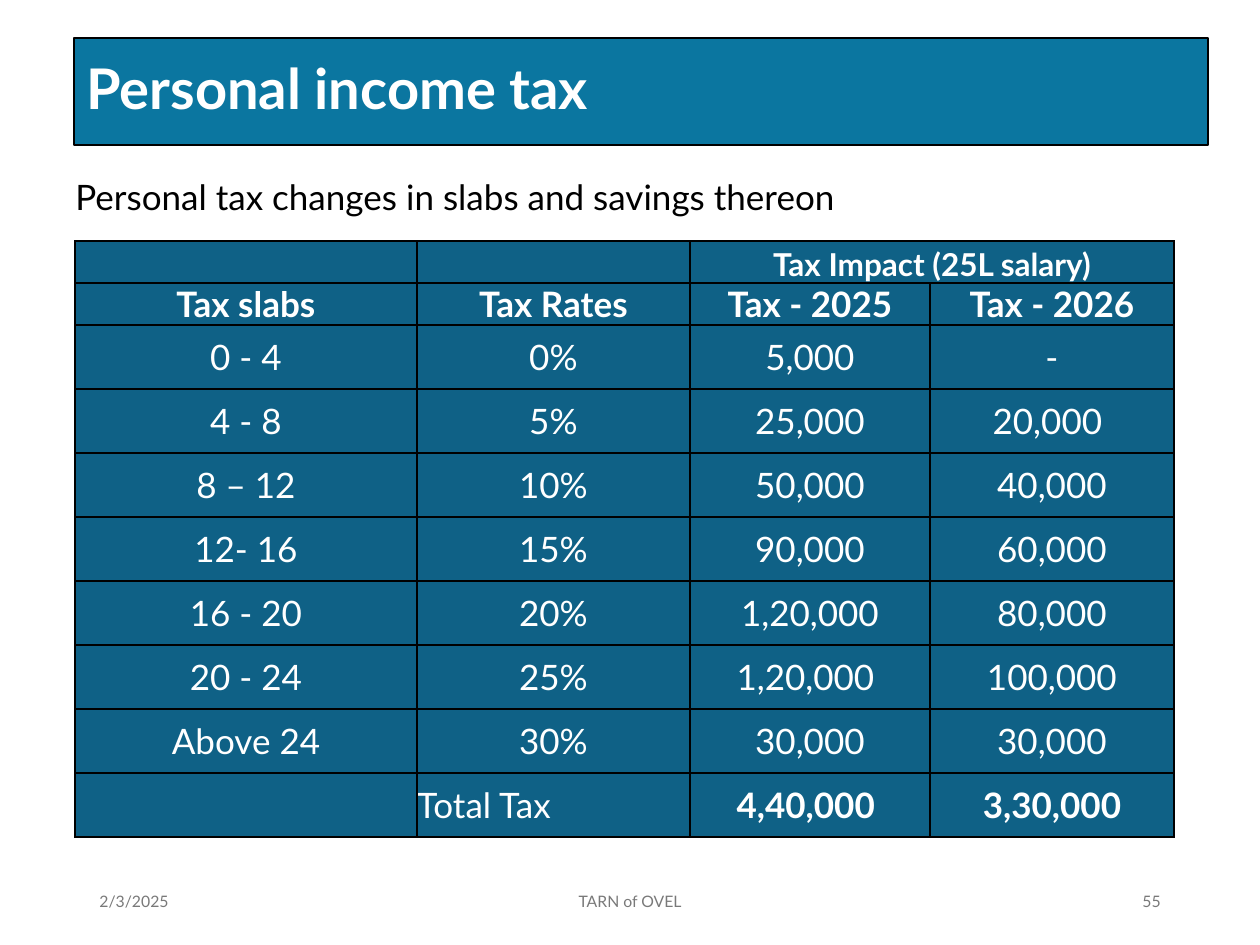
from lxml import etree
from pptx import Presentation
from pptx.dml.color import RGBColor
from pptx.enum.shapes import MSO_SHAPE
from pptx.enum.text import MSO_ANCHOR, PP_ALIGN
from pptx.oxml.ns import qn
from pptx.util import Pt

RECT = MSO_SHAPE.RECTANGLE
TOP, MIDDLE, BOTTOM = MSO_ANCHOR.TOP, MSO_ANCHOR.MIDDLE, MSO_ANCHOR.BOTTOM
LEFT, CENTER, RIGHT = PP_ALIGN.LEFT, PP_ALIGN.CENTER, PP_ALIGN.RIGHT

WHITE = RGBColor(0xFF, 0xFF, 0xFF)
BLACK = RGBColor(0x00, 0x00, 0x00)
GRAY = RGBColor(0x79, 0x79, 0x79)
BLUE = RGBColor(0x0B, 0x76, 0xA0)
NAVY = RGBColor(0x0F, 0x61, 0x86)

FONT = "Lato"
PX = 914400 / 126

COLS = [342, 273, 240, 244]
HEADS = 2
ROWS = [
    ["", "", "Tax Impact (25L salary)", ""],
    ["Tax slabs", "Tax Rates", "Tax - 2025", "Tax - 2026"],
    ["0 - 4", "0%", "5,000", "-"],
    ["4 - 8", "5%", "25,000", "20,000 "],
    ["8 – 12", "10%", "50,000", "40,000"],
    ["12- 16", "15%", "90,000", "60,000"],
    ["16 - 20", "20%", "1,20,000", "80,000"],
    ["20 - 24", "25%", "1,20,000 ", "100,000"],
    ["Above 24", "30%", "30,000", "30,000"],
    ["", "Total Tax", "4,40,000 ", "3,30,000"],
]


def px(num):
    return round(num * PX)


def add_run(para, text, size, color, bold=False):
    run = para.add_run()
    run.text = text
    font = run.font
    font.name, font.size, font.bold = FONT, Pt(size), bold
    font.color.rgb = color


def add_title(slide, text, box):
    bar = slide.shapes.add_shape(RECT, *map(px, box))
    bar.shadow.inherit = False
    bar.fill.solid()
    bar.fill.fore_color.rgb = BLUE
    bar.line.color.rgb = BLACK
    bar.line.width = Pt(0.75)
    bar.text_frame.vertical_anchor = MIDDLE
    para = bar.text_frame.paragraphs[0]
    para.alignment = LEFT
    para.line_spacing = 0.9
    add_run(para, text, 32, WHITE, True)


def add_text(slide, text, box, size, color, align=LEFT, anchor=MIDDLE):
    frame = slide.shapes.add_textbox(*map(px, box)).text_frame
    frame.word_wrap = True
    frame.vertical_anchor = anchor
    para = frame.paragraphs[0]
    para.alignment = align
    add_run(para, text, size, color)
    return para


def add_edges(cell):
    props = cell._tc.get_or_add_tcPr()
    for spot, side in enumerate(("lnL", "lnR", "lnT", "lnB")):
        line = etree.Element(qn(f"a:{side}"), w=str(Pt(1)))
        fill = etree.SubElement(line, qn("a:solidFill"))
        etree.SubElement(fill, qn("a:srgbClr"), val=str(BLACK))
        props.insert(spot, line)


def fill_cell(cell, text, row):
    cell.fill.solid()
    cell.fill.fore_color.rgb = NAVY
    cell.margin_left = cell.margin_right = 0
    cell.margin_top = cell.margin_bottom = 0
    cell.vertical_anchor = BOTTOM if row < HEADS else MIDDLE
    add_edges(cell)
    if text:
        para = cell.text_frame.paragraphs[0]
        para.alignment = LEFT if text == "Total Tax" else CENTER
        total = row == len(ROWS) - 1 and text != "Total Tax"
        size = 18 if row == 0 else 20
        add_run(para, text, size, WHITE, row < HEADS or total)


def add_slabs(slide, left, top):
    highs = [42 if row < HEADS else 64 for row in range(len(ROWS))]
    box = (left, top, sum(COLS), sum(highs))
    table = slide.shapes.add_table(len(ROWS), len(COLS), *map(px, box)).table
    for col, wide in zip(table.columns, COLS):
        col.width = px(wide)
    for row, high in zip(table.rows, highs):
        row.height = px(high)
    for r, texts in enumerate(ROWS):
        for c, text in enumerate(texts):
            fill_cell(table.cell(r, c), text, r)
    # The impact heading covers both years
    table.cell(0, 2).merge(table.cell(0, 3))


def main():
    deck = Presentation()
    deck.slide_width, deck.slide_height = px(1260), px(945)
    slide = deck.slides.add_slide(deck.slide_layouts[6])

    # Heading and lead line
    add_title(slide, "Personal income tax", (74, 38, 1134, 107))
    lead = add_text(slide, "Personal tax changes in slabs and savings thereon",
                    (63, 174, 1145, 659), 20, BLACK, anchor=TOP)
    lead.line_spacing = 0.9
    lead.space_before = Pt(7.5)

    # Footer
    for text, left, wide, align in (
        ("2/3/2025", 87, 283, LEFT),
        ("TARN of OVEL", 417, 426, CENTER),
        ("55", 890, 283, RIGHT),
    ):
        add_text(slide, text, (left, 876, wide, 50), 9, GRAY, align)

    # Tax table
    add_slabs(slide, 75, 241)
    deck.save("out.pptx")


if __name__ == "__main__":
    main()
